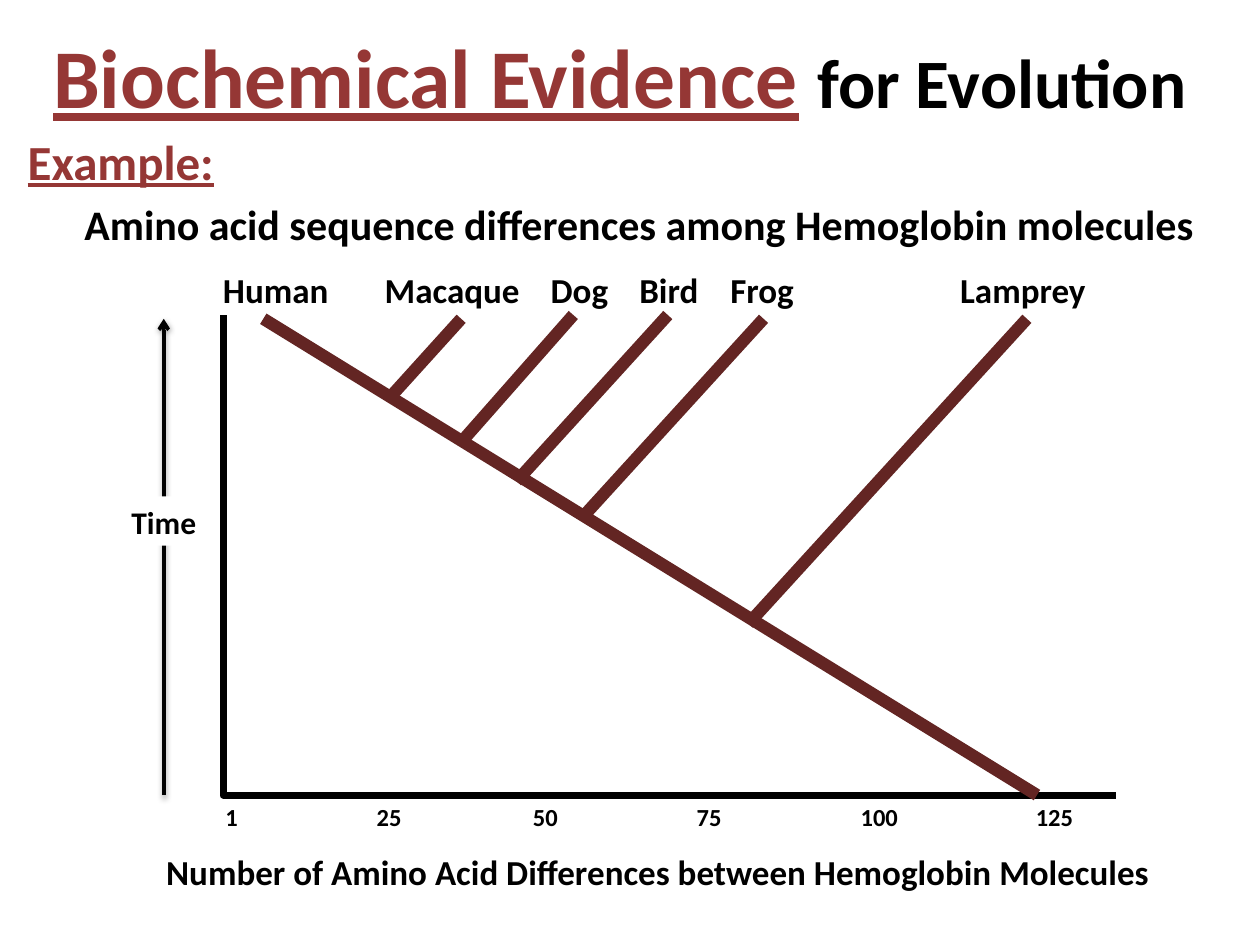
from lxml import etree
from pptx import Presentation
from pptx.dml.color import RGBColor
from pptx.enum.shapes import MSO_CONNECTOR
from pptx.enum.text import MSO_ANCHOR, MSO_AUTO_SIZE, PP_ALIGN
from pptx.oxml.ns import qn
from pptx.util import Inches, Pt

STRAIGHT = MSO_CONNECTOR.STRAIGHT
MIDDLE, TOP = MSO_ANCHOR.MIDDLE, MSO_ANCHOR.TOP
NO_AUTOFIT = MSO_AUTO_SIZE.NONE
CENTER, LEFT = PP_ALIGN.CENTER, PP_ALIGN.LEFT
FONT = "Calibri"
BLACK, WHITE, RED, MAROON = "000000", "FFFFFF", "953735", "632523"

SPECIES = [("Human", 0.42), ("Macaque", 1.82), ("Dog", 2.83),
           ("Bird", 3.54), ("Frog", 4.28), ("Lamprey", 6.35)]
DIFFERENCES = [("1", 0.07), ("25", 1.32), ("50", 2.56),
               ("75", 3.86), ("100", 5.21), ("125", 6.6)]
LINEAGES = [((6.46, 3.81), (0.32, 0.03)), ((4.17, 2.45), (6.38, 0.03)),
            ((2.84, 1.62), (4.29, 0.03)), ((2.33, 1.32), (3.53, 0)),
            ((1.89, 1.01), (2.78, 0)), ((1.32, 0.66), (1.89, 0.03))]


def color(hex_string):
    """Turn a hex string into a colour."""
    return RGBColor.from_string(hex_string)


def add_run(paragraph, text, size, hex_string=BLACK, underline=False):
    """Append one bold run to a paragraph."""
    run = paragraph.add_run()
    run.text = text
    font = run.font
    font.name, font.size, font.bold = FONT, Pt(size), True
    font.underline = underline
    font.color.rgb = color(hex_string)


def place(shape, box):
    """Move a shape to a box given in inches."""
    shape.left, shape.top, shape.width, shape.height = map(Inches, box)


def add_label(slide, box, text, size, wrap=True):
    """Add a one-line text box and return it."""
    label = slide.shapes.add_textbox(*map(Inches, box))
    label.text_frame.word_wrap = wrap
    add_run(label.text_frame.paragraphs[0], text, size)
    return label


def add_line(slide, start, end, hex_string, width):
    """Add a straight line without shadow and return it."""
    line = slide.shapes.add_connector(
        STRAIGHT, *map(Inches, (*start, *end)))
    line.line.color.rgb = color(hex_string)
    line.line.width = Pt(width)
    etree.SubElement(line._element.spPr, qn("a:effectLst"))
    return line


def add_title(slide, box):
    """Fill the title placeholder."""
    title = slide.shapes.title
    place(title, box)
    title.text_frame.vertical_anchor = MIDDLE
    title.text_frame.auto_size = NO_AUTOFIT
    heading = title.text_frame.paragraphs[0]
    heading.alignment = CENTER
    add_run(heading, "Biochemical Evidence", 47.7, RED, True)
    add_run(heading, " ", 47.7)
    add_run(heading, "for Evolution", 39.6)


def add_example(slide, box):
    """Fill the body placeholder with the example and its subject."""
    body = slide.placeholders[1]
    place(body, box)
    frame = body.text_frame
    frame.vertical_anchor = TOP
    frame.auto_size = NO_AUTOFIT
    example, subject = frame.paragraphs[0], frame.add_paragraph()
    add_run(example, "Example:", 28, RED, True)
    add_run(subject,
            "Amino acid sequence differences among Hemoglobin molecules", 24)
    for paragraph, margin in ((example, 0), (subject, 0.45)):
        paragraph.alignment = LEFT
        properties = paragraph._p.get_or_add_pPr()
        properties.set("marL", str(Inches(margin)))
        properties.set("indent", "0")
        etree.SubElement(properties, qn("a:buNone"))


def add_scale(slide, box, marks, size):
    """Add a row of labels, each centred on its own tab stop."""
    left, top, width, height = box
    text = "".join("\t" + name for name, _ in marks)
    scale = add_label(slide, (left - 0.1, top, width + 0.2, height),
                      text, size)
    properties = scale.text_frame.paragraphs[0]._p.get_or_add_pPr()
    tabs = etree.SubElement(properties, qn("a:tabLst"))
    for _, position in marks:
        etree.SubElement(tabs, qn("a:tab"),
                         pos=str(Inches(position)), algn="ctr")


def add_cladogram(slide, box):
    """Draw the axes, the lineages and the labels around them."""
    left, top, width, height = box
    bottom = top + height
    outline = slide.shapes.build_freeform(Inches(left), Inches(top))
    outline.add_line_segments(
        [(Inches(left), Inches(bottom)),
         (Inches(left + width), Inches(bottom))], close=False)
    axes = outline.convert_to_shape()
    axes.fill.background()
    axes.line.color.rgb = color(BLACK)
    axes.line.width = Pt(4)
    axes.shadow.inherit = False
    for (fork_x, fork_y), (tip_x, tip_y) in LINEAGES:
        add_line(slide, (left + fork_x, top + fork_y),
                 (left + tip_x, top + tip_y), MAROON, 7)
    add_scale(slide, (left, top - 0.42, width, 0.42), SPECIES, 20)
    add_scale(slide, (left, bottom + 0.01, width, 0.36), DIFFERENCES, 14)
    add_label(slide, (left - 0.55, bottom + 0.39, 8.19, 0.42),
              "Number of Amino Acid Differences between Hemoglobin Molecules",
              20)


def add_time_arrow(slide, box):
    """Draw the upward time arrow with its label across the shaft."""
    left, top, width, height = box
    middle = left + width / 2
    arrow = add_line(slide, (middle, top + height), (middle, top), BLACK, 2)
    etree.SubElement(arrow.line._get_or_add_ln(), qn("a:tailEnd"),
                     type="arrow")
    effects = arrow._element.spPr.find(qn("a:effectLst"))
    shadow = etree.SubElement(effects, qn("a:outerShdw"), blurRad="40000",
                              dist="20000", dir="5400000", rotWithShape="0")
    tint = etree.SubElement(shadow, qn("a:srgbClr"), val=BLACK)
    etree.SubElement(tint, qn("a:alpha"), val="38000")
    time = add_label(slide, (left, top + 1.41, width, 0.39), "Time", 18,
                     wrap=False)
    time.text_frame.paragraphs[0].alignment = CENTER
    time.fill.solid()
    time.fill.fore_color.rgb = color(WHITE)


def main():
    """Build the slide and save it."""
    deck = Presentation()
    deck.slide_width, deck.slide_height = Inches(10), Inches(7.5)
    slide = deck.slides.add_slide(deck.slide_layouts[1])
    add_title(slide, (0.04, -0.03, 9.76, 1.25))
    add_example(slide, (0.12, 0.99, 9.74, 3.01))
    add_cladogram(slide, (1.77, 2.5, 7.09, 3.81))
    add_time_arrow(slide, (0.94, 2.53, 0.72, 3.78))
    deck.save("out.pptx")


if __name__ == "__main__":
    main()
